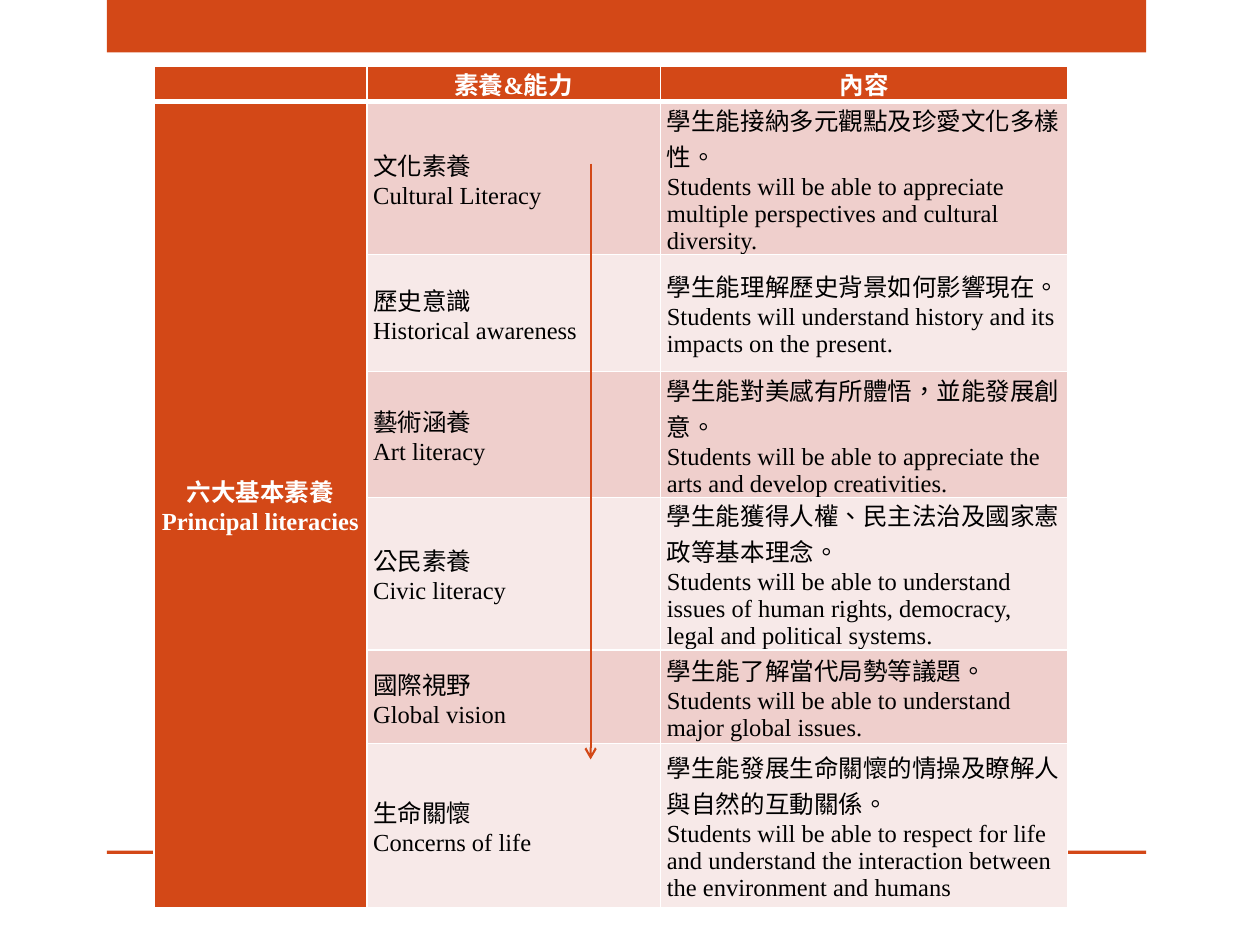
from pptx import Presentation
from pptx.dml.color import RGBColor
from pptx.enum.lang import MSO_LANGUAGE_ID
from pptx.enum.shapes import MSO_CONNECTOR, MSO_SHAPE
from pptx.enum.text import MSO_ANCHOR, PP_ALIGN
from pptx.oxml import parse_xml
from pptx.oxml.ns import nsdecls
from pptx.util import Pt

STRAIGHT = MSO_CONNECTOR.STRAIGHT
RECTANGLE = MSO_SHAPE.RECTANGLE
TOP, MIDDLE = MSO_ANCHOR.TOP, MSO_ANCHOR.MIDDLE
LEFT, CENTER, JUSTIFY = PP_ALIGN.LEFT, PP_ALIGN.CENTER, PP_ALIGN.JUSTIFY
CHINESE = MSO_LANGUAGE_ID.TRADITIONAL_CHINESE

COLORS = {
    "accent": "D34817",
    "dark_band": "EFCFCC",
    "light_band": "F7E9E8",
    "white": "FFFFFF",
    "black": "000000",
}
HEADINGS = ["", "素養&能力", "內容"]
CATEGORY = "六大基本素養\nPrincipal literacies"
LITERACIES = [
    ("文化素養\nCultural Literacy",
     "學生能接納多元觀點及珍愛文化多樣性。\n"
     "Students will be able to appreciate multiple perspectives and cultural diversity."),
    ("歷史意識\nHistorical awareness",
     "學生能理解歷史背景如何影響現在。\n"
     "Students will understand history and its impacts on the present."),
    ("藝術涵養\nArt literacy",
     "學生能對美感有所體悟，並能發展創意。\n"
     "Students will be able to appreciate the arts and develop creativities."),
    ("公民素養\nCivic literacy",
     "學生能獲得人權、民主法治及國家憲政等基本理念。\n"
     "Students will be able to understand issues of human rights, democracy, "
     "legal and political systems."),
    ("國際視野\nGlobal vision",
     "學生能了解當代局勢等議題。\n"
     "Students will be able to understand major global issues."),
    ("生命關懷\nConcerns of life",
     "學生能發展生命關懷的情操及瞭解人與自然的互動關係。\n"
     "Students will be able to respect for life and understand the interaction "
     "between the environment and humans"),
]
COLUMN_WIDTHS = [121.7, 167.8, 232.6]
ROW_HEIGHTS = [15, 80, 67, 67, 80, 53.5, 93.5]


def color(name):
    """Return the named palette colour."""
    return RGBColor.from_string(COLORS[name])


class SlideBuilder:
    """Draw styled elements on the current slide."""

    font_name = "Times New Roman"
    font_size = 14

    def __init__(self, page):
        self.page = page

    def bar(self, left, top, width, height):
        """Add a plain accent bar."""
        box = self.page.shapes.add_shape(RECTANGLE, Pt(left), Pt(top), Pt(width), Pt(height))
        box.shadow.inherit = False
        box.fill.solid()
        box.fill.fore_color.rgb = color("accent")
        box.line.fill.background()

    def table(self, left, top, widths, heights):
        """Add an empty table with the given column widths and row heights."""
        frame = self.page.shapes.add_table(
            len(heights), len(widths), Pt(left), Pt(top), Pt(sum(widths)), Pt(sum(heights)))
        for column, width in zip(frame.table.columns, widths):
            column.width = Pt(width)
        for row, height in zip(frame.table.rows, heights):
            row.height = Pt(height)
        return frame.table

    def cell(self, cell, text, fill, ink="black", bold=False, anchor=MIDDLE,
             alignments=(LEFT, LEFT), top_border=1, bottom_border=1):
        """Fill one table cell with styled text and white borders."""
        cell.margin_left = cell.margin_right = Pt(3.6)
        cell.margin_top = cell.margin_bottom = 0
        cell.vertical_anchor = anchor
        cell.fill.solid()
        cell.fill.fore_color.rgb = color(fill)
        cell.text_frame.text = text
        for para, alignment in zip(cell.text_frame.paragraphs, alignments):
            para.alignment = alignment
            para.font.size = Pt(self.font_size)
            for span in para.runs:
                span.font.name = self.font_name
                span.font.size = Pt(self.font_size)
                span.font.bold = bold
                span.font.color.rgb = color(ink)
                span.font.language_id = CHINESE
        borders = {"L": 1, "R": 1, "T": top_border, "B": bottom_border}
        properties = cell._tc.get_or_add_tcPr()
        for index, (side, width) in enumerate(borders.items()):
            properties.insert(index, parse_xml(
                f'<a:ln{side} {nsdecls("a")} w="{Pt(width)}"><a:solidFill>'
                f'<a:srgbClr val="{COLORS["white"]}"/></a:solidFill></a:ln{side}>'))

    def arrow(self, start_x, start_y, end_x, end_y):
        """Add a straight line with an open arrowhead at its end."""
        line = self.page.shapes.add_connector(
            STRAIGHT, Pt(start_x), Pt(start_y), Pt(end_x), Pt(end_y))
        line.line.width = Pt(1.25)
        line.line.color.rgb = color("accent")
        line.line._get_or_add_ln().append(parse_xml(f'<a:tailEnd {nsdecls("a")} type="arrow"/>'))
        line._element.spPr.append(parse_xml(f'<a:effectLst {nsdecls("a")}/>'))


def main():
    """Build and save the slide."""
    deck = Presentation()
    deck.slide_width, deck.slide_height = Pt(720), Pt(540)
    builder = SlideBuilder(deck.slides.add_slide(deck.slide_layouts[6]))
    builder.bar(61, 0, 594, 30)
    builder.bar(61, 486, 594, 2)

    table = builder.table(88, 37.7, COLUMN_WIDTHS, ROW_HEIGHTS)
    centered = (CENTER, CENTER)
    for column, heading in enumerate(HEADINGS):
        builder.cell(table.cell(0, column), heading, "accent", "white", True, TOP,
                     centered, bottom_border=3)
    table.cell(1, 0).merge(table.cell(len(LITERACIES), 0))
    for row, (literacy, content) in enumerate(LITERACIES, start=1):
        band = "dark_band" if row % 2 else "light_band"
        top_border = 3 if row == 1 else 1
        builder.cell(table.cell(row, 0), CATEGORY if row == 1 else "", "accent", "white",
                     True, alignments=centered, top_border=top_border)
        builder.cell(table.cell(row, 1), literacy, band, alignments=(JUSTIFY, LEFT),
                     top_border=top_border)
        builder.cell(table.cell(row, 2), content, band, top_border=top_border)

    builder.arrow(337.5, 93.5, 337.5, 434)
    deck.save("out.pptx")


if __name__ == "__main__":
    main()
